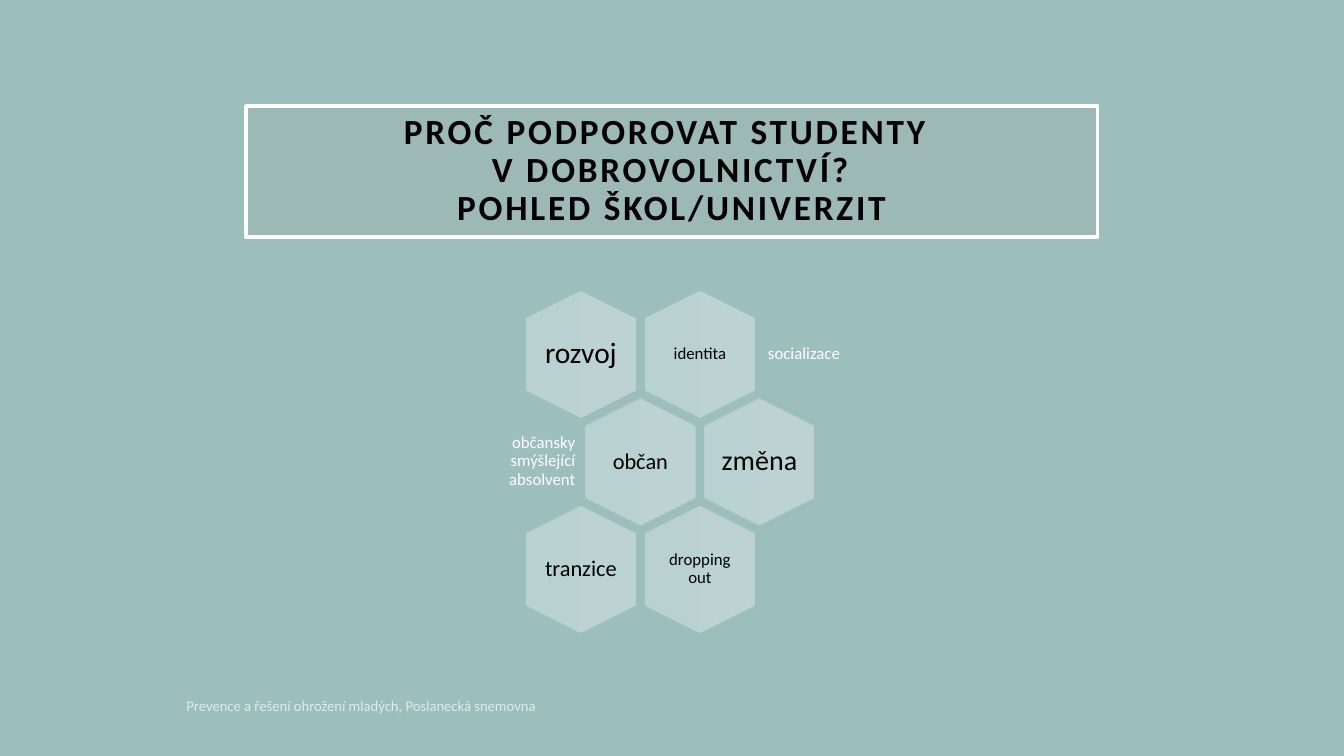
from dataclasses import dataclass

from lxml.etree import SubElement
from pptx import Presentation
from pptx.dml.color import RGBColor
from pptx.enum.shapes import MSO_SHAPE
from pptx.enum.text import MSO_ANCHOR, MSO_AUTO_SIZE, PP_ALIGN
from pptx.oxml.ns import qn
from pptx.util import Cm, Pt


@dataclass(frozen=True)
class Theme:
    font: str = "Calibri"
    background: RGBColor = RGBColor(0x9C, 0xBE, 0xBD)
    title_fill: RGBColor = RGBColor(0xA7, 0xA0, 0x8E)
    hexagon_top: RGBColor = RGBColor(0xBC, 0xD3, 0xD2)
    hexagon_bottom: RGBColor = RGBColor(0xB9, 0xD1, 0xD1)
    dark: RGBColor = RGBColor(0, 0, 0)
    light: RGBColor = RGBColor(255, 255, 255)
    title_size: float = 25.2
    huge: float = 21
    large: float = 20
    medium: float = 16
    small: float = 12
    footer_size: float = 10.5


theme = Theme()


def format_text(shape, size, color, align, inset, line_spacing=0.9):
    frame = shape.text_frame
    frame.word_wrap = True
    frame.auto_size = MSO_AUTO_SIZE.NONE
    frame.vertical_anchor = MSO_ANCHOR.MIDDLE
    frame.margin_left = frame.margin_right = Cm(inset)
    frame.margin_top = frame.margin_bottom = Cm(inset)
    for paragraph in frame.paragraphs:
        paragraph.alignment = align
        paragraph.line_spacing = line_spacing
        for run in paragraph.runs:
            run.font.name = theme.font
            run.font.size = Pt(size)
            run.font.color.rgb = color


def set_opacity(properties, percent):
    color = properties.find(qn("a:solidFill")).find(qn("a:srgbClr"))
    SubElement(color, qn("a:alpha")).set("val", str(percent * 1000))


presentation = Presentation()
presentation.slide_width = Cm(33.87)
presentation.slide_height = Cm(19.05)
slide = presentation.slides.add_slide(presentation.slide_layouts[5])
slide.background.fill.solid()
slide.background.fill.fore_color.rgb = theme.background

# Title in a white frame
title = slide.shapes.title
title.left, title.top, title.width, title.height = Cm(6.2), Cm(2.67), Cm(21.46), Cm(3.3)
title.fill.solid()
title.fill.fore_color.rgb = theme.title_fill
set_opacity(title.element.spPr, 15)
title.line.color.rgb = theme.light
title.line.width = Pt(2.5)
title.text_frame.text = "\v".join(
    ["PROČ PODPOROVAT STUDENTY ", "V DOBROVOLNICTVÍ?", "POHLED ŠKOL/UNIVERZIT"]
)
format_text(title, theme.title_size, theme.dark, PP_ALIGN.CENTER, 0.5)
for run in title.text_frame.paragraphs[0].runs:
    run.font.bold = True
    run.font._element.set("spc", "200")

# Honeycomb: every second row is shifted by half a step
honeycomb = [
    [("rozvoj", theme.huge), ("identita", theme.small)],
    [("občan", theme.medium), ("změna", theme.large)],
    [("tranzice", theme.medium), ("dropping out", theme.small)],
]
first_x, first_y = 14.64, 8.93
step_x, step_y = 3.0, 2.71
long_side, short_side = 3.2, 2.78
label_width, label_height = 2.2, 2.2

for row, cells in enumerate(honeycomb):
    for column, (word, size) in enumerate(cells):
        x = first_x + (column + row % 2 / 2) * step_x
        y = first_y + row * step_y
        hexagon = slide.shapes.add_shape(
            MSO_SHAPE.HEXAGON,
            Cm(x - long_side / 2), Cm(y - short_side / 2), Cm(long_side), Cm(short_side),
        )
        hexagon.rotation = 90
        hexagon.adjustments[0] = 0.25
        hexagon.shadow.inherit = False
        hexagon.line.fill.background()
        hexagon.fill.gradient()
        hexagon.fill.gradient_angle = 270
        top_stop, bottom_stop = hexagon.fill.gradient_stops
        top_stop.color.rgb, top_stop.position = theme.hexagon_top, 0
        bottom_stop.color.rgb, bottom_stop.position = theme.hexagon_bottom, 1

        label = slide.shapes.add_textbox(
            Cm(x - label_width / 2), Cm(y - label_height / 2), Cm(label_width), Cm(label_height)
        )
        label.text_frame.text = word
        inset = 0.13 if size == theme.small else 0
        format_text(label, size, theme.dark, PP_ALIGN.CENTER, inset)

# Side notes beside the honeycomb
side_notes = [
    (" socializace", 19.13, 7.98, 3.56, PP_ALIGN.LEFT),
    ("občansky smýšlející absolvent", 11.18, 10.68, 3.45, PP_ALIGN.RIGHT),
]
for words, left, top, width, align in side_notes:
    note = slide.shapes.add_textbox(Cm(left), Cm(top), Cm(width), Cm(1.9))
    note.text_frame.text = words
    format_text(note, theme.small, theme.light, align, 0.13)

# Footer
footer = slide.shapes.add_textbox(Cm(4.45), Cm(17.32), Cm(16.38), Cm(0.9))
footer.text_frame.text = "Prevence a řešení ohrožení mladých, Poslanecká snemovna"
format_text(footer, theme.footer_size, theme.light, PP_ALIGN.LEFT, 0.25, 1.0)
set_opacity(footer.text_frame.paragraphs[0].runs[0].font._element, 70)

presentation.save("out.pptx")
